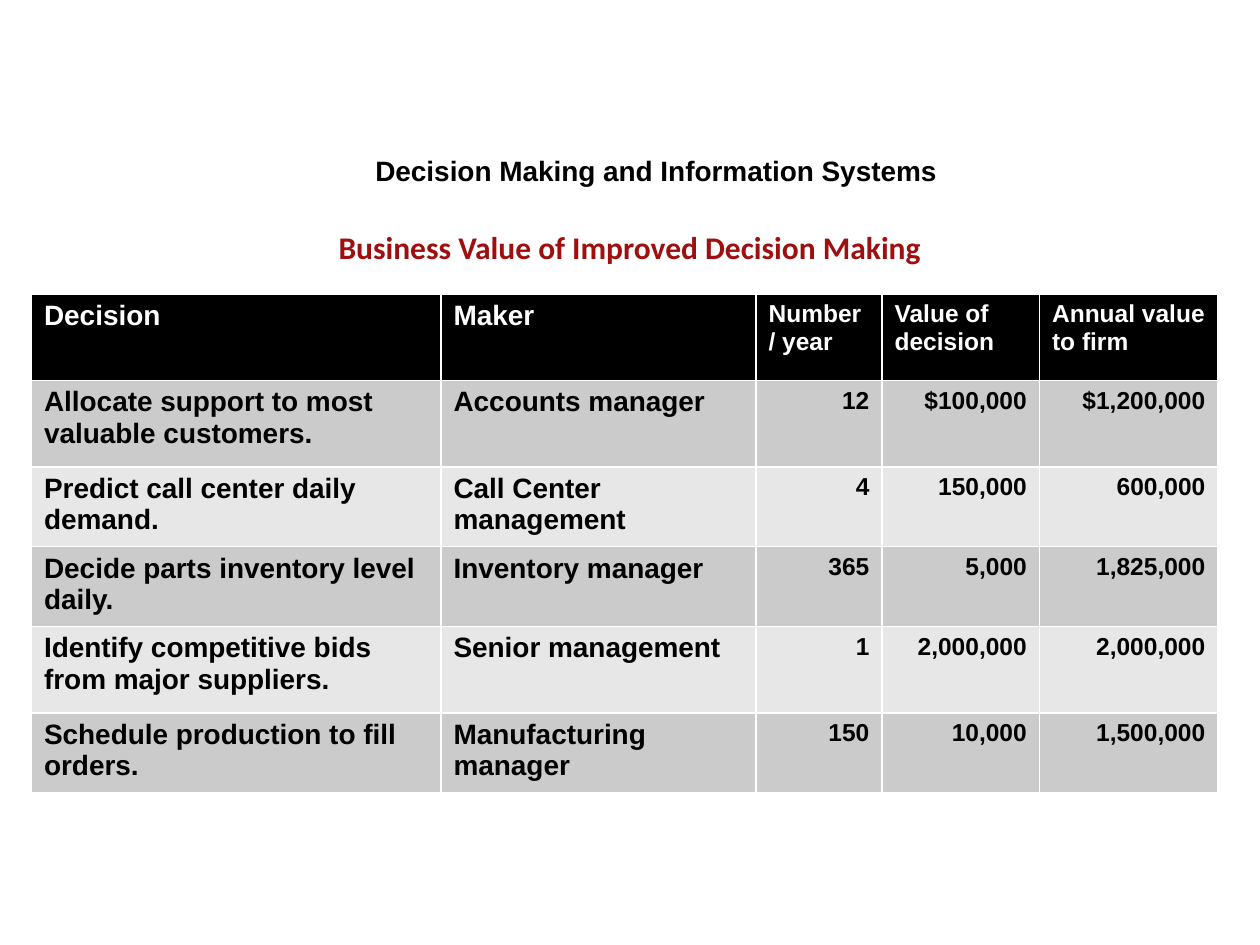
from pptx import Presentation
from pptx import util as u
from pptx.dml import color as c
from pptx.enum import text as t

COLORS = {"ink": "000000", "paper": "FFFFFF", "accent": "9F0F10",
          "dark_band": "CBCBCB", "light_band": "E7E7E7"}


def write(frame, content, size, font="Arial", color="ink", align=t.PP_ALIGN.LEFT):
    frame.word_wrap = True
    paragraph = frame.paragraphs[0]
    paragraph.alignment = align
    run = paragraph.add_run()
    run.text = content
    run.font.size = u.Pt(size)
    run.font.name = font
    run.font.bold = True
    run.font.color.rgb = c.RGBColor.from_string(COLORS[color])


presentation = Presentation()
presentation.slide_width = u.Pt(720)
presentation.slide_height = u.Pt(540)
slide = presentation.slides.add_slide(presentation.slide_layouts[5])

title = slide.shapes.title
title.left, title.top, title.width, title.height = u.Pt(114), u.Pt(84), u.Pt(522), u.Pt(26.64)
write(title.text_frame, "Decision Making and Information Systems", 16, align=t.PP_ALIGN.CENTER)

subtitle = slide.shapes.add_textbox(u.Pt(54), u.Pt(126.72), u.Pt(612), u.Pt(36))
write(subtitle.text_frame, "Business Value of Improved Decision Making", 18,
      font="Calibri", color="accent", align=t.PP_ALIGN.CENTER)

for frame in (title.text_frame, subtitle.text_frame):
    frame.vertical_anchor = t.MSO_ANCHOR.TOP
    frame.auto_size = t.MSO_AUTO_SIZE.SHAPE_TO_FIT_TEXT

rows = [
    ("Decision", "Maker", "Number / year", "Value of decision", "Annual value to firm"),
    ("Allocate support to most valuable customers.", "Accounts manager",
     "12", "$100,000", "$1,200,000"),
    ("Predict call center daily demand.", "Call Center management",
     "4", "150,000", "600,000"),
    ("Decide parts inventory level daily.", "Inventory manager",
     "365", "5,000", "1,825,000"),
    ("Identify competitive bids from major suppliers.", "Senior management",
     "1", "2,000,000", "2,000,000"),
    ("Schedule production to fill orders.", "Manufacturing manager",
     "150", "10,000", "1,500,000"),
]
column_widths = [234, 180, 72, 90, 102]
row_heights = [49.4, 49.4, 45.6, 45.6, 49.4, 45.6]

table = slide.shapes.add_table(len(rows), len(column_widths), u.Pt(18), u.Pt(168),
                               u.Pt(sum(column_widths)), u.Pt(sum(row_heights))).table
for column, width in zip(table.columns, column_widths):
    column.width = u.Pt(width)

for row_index, values in enumerate(rows):
    table.rows[row_index].height = u.Pt(row_heights[row_index])
    is_header = row_index == 0
    band = "ink" if is_header else "dark_band" if row_index % 2 else "light_band"
    for column_index, value in enumerate(values):
        is_figure = column_index >= 2
        cell = table.cell(row_index, column_index)
        cell.fill.solid()
        cell.fill.fore_color.rgb = c.RGBColor.from_string(COLORS[band])
        write(cell.text_frame, value, 14 if is_figure else 16,
              color="paper" if is_header else "ink",
              align=t.PP_ALIGN.RIGHT if is_figure and not is_header else t.PP_ALIGN.LEFT)

presentation.save("out.pptx")
